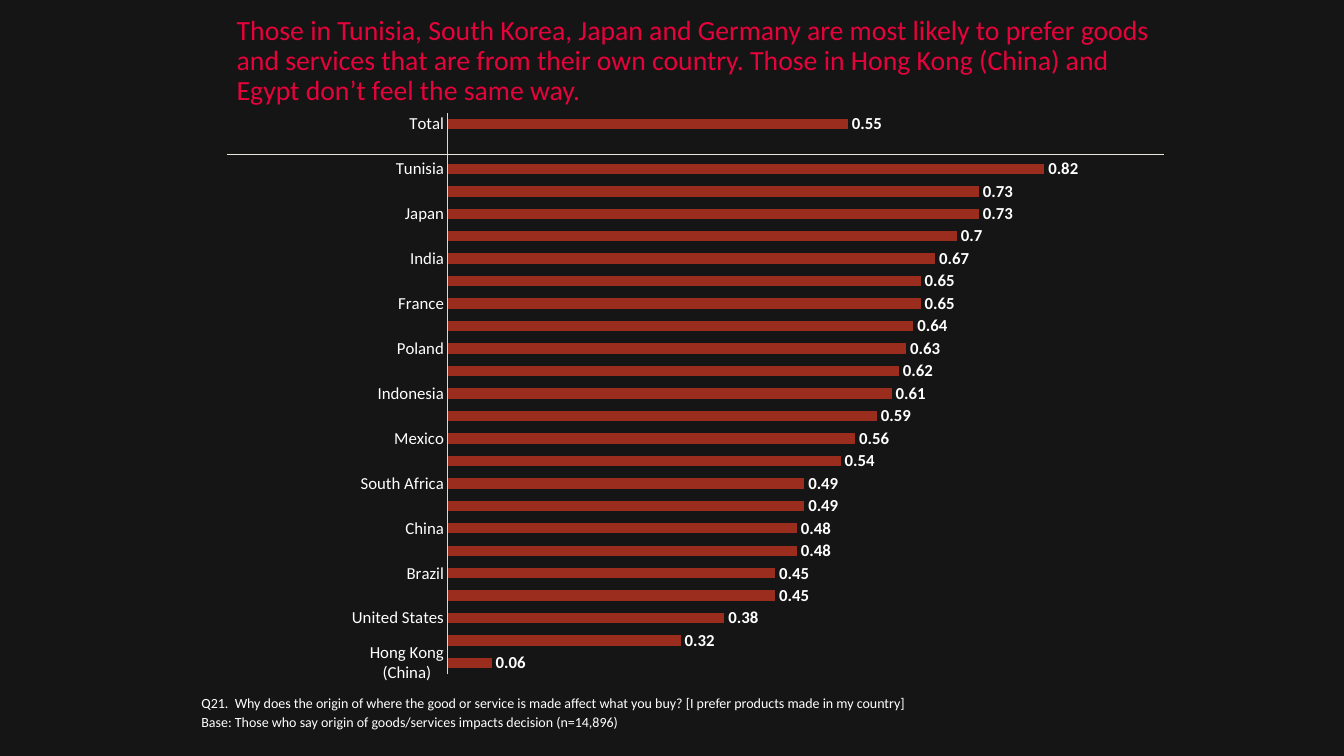
import pptx
import pptx.util
import pptx.chart.data
import pptx.dml.color
import pptx.enum.chart
import pptx.enum.shapes
import pptx.enum.text
import pptx.oxml
import pptx.oxml.ns
from dataclasses import dataclass

Pt = pptx.util.Pt

TITLE = (
    "Those in Tunisia, South Korea, Japan and Germany are most likely to prefer goods "
    "and services that are from their own country. Those in Hong Kong (China) and "
    "Egypt don’t feel the same way."
)
FOOTER = [
    "Q21.  Why does the origin of where the good or service is made affect what you buy? "
    "[I prefer products made in my country]",
    "Base: Those who say origin of goods/services impacts decision (n=14,896)",
]
SHARES = [
    ("Total", 0.55), ("", None), ("Tunisia", 0.82), ("South Korea", 0.73),
    ("Japan", 0.73), ("Germany", 0.7), ("India", 0.67), ("Canada", 0.65),
    ("France", 0.65), ("Australia", 0.64), ("Poland", 0.63), ("Italy", 0.62),
    ("Indonesia", 0.61), ("Great Britain", 0.59), ("Mexico", 0.56),
    ("Turkey", 0.54), ("South Africa", 0.49), ("Sweden", 0.49), ("China", 0.48),
    ("Pakistan", 0.48), ("Brazil", 0.45), ("Kenya", 0.45),
    ("United States", 0.38), ("Egypt", 0.32), ("Hong Kong (China)", 0.06),
]

SLIDE = (960, 540)
TITLE_BOX = (162, 11.5, 681, 65.5)
CHART_BOX = (246.2, 72, 604.8, 425.5)
PLOT_BOX = (320, 80.7, 519.3, 401.4)
FOOTER_BOX = (136.8, 493.2, 571.7, 32.4)
DIVIDER = (162, 831.6, 110.2)


@dataclass
class Theme:
    font: str = "Calibri"
    back: str = "151515"
    title: str = "E6023B"
    text: str = "FFFFFF"
    bar: str = "9B2D1F"
    axis: str = "D9D9D9"
    rule: str = "E9E5DC"
    title_size: float = 19.8
    chart_size: float = 12
    footer_size: float = 10


theme = Theme()


def rgb(value):
    return pptx.dml.color.RGBColor.from_string(value)


def set_font(font, size, color, bold=False):
    font.name, font.size, font.bold = theme.font, Pt(size), bold
    font.color.rgb = rgb(color)


def add_text(slide, box, lines, size, color, anchor, spacing, before=0):
    tf = slide.shapes.add_textbox(*map(Pt, box)).text_frame
    tf.word_wrap = True
    tf.vertical_anchor = anchor
    for i, line in enumerate(lines):
        p = tf.paragraphs[0] if i == 0 else tf.add_paragraph()
        p.text = line
        p.line_spacing = spacing
        p.space_before = Pt(before)
        set_font(p.font, size, color)


def place_plot(chart):
    left, top, width, height = CHART_BOX
    x, y, w, h = PLOT_BOX
    parts = {"x": (x - left) / width, "y": (y - top) / height,
             "w": w / width, "h": h / height}
    values = "".join(f'<c:{k} val="{v:.3f}"/>' for k, v in parts.items())
    layout = pptx.oxml.parse_xml(
        f'<c:layout {pptx.oxml.ns.nsdecls("c")}><c:manualLayout>'
        '<c:layoutTarget val="inner"/><c:xMode val="edge"/><c:yMode val="edge"/>'
        f'{values}</c:manualLayout></c:layout>'
    )
    area = chart.element.find(".//" + pptx.oxml.ns.qn("c:plotArea")) if hasattr(
        chart, "element") else chart._chartSpace.chart.plotArea
    old = area.find(pptx.oxml.ns.qn("c:layout"))
    if old is not None:
        area.remove(old)
    area.insert(0, layout)


def add_share_chart(slide):
    enums = pptx.enum.chart
    data = pptx.chart.data.CategoryChartData()
    data.categories = [country for country, share in SHARES]
    data.add_series("Series 1", [share for country, share in SHARES])
    chart = slide.shapes.add_chart(
        enums.XL_CHART_TYPE.BAR_CLUSTERED, *map(Pt, CHART_BOX), data
    ).chart
    chart.has_legend = chart.has_title = False
    set_font(chart.font, theme.chart_size, theme.text)

    cat = chart.category_axis
    cat.reverse_order = True
    cat.major_tick_mark = cat.minor_tick_mark = enums.XL_TICK_MARK.NONE
    cat.format.line.color.rgb = rgb(theme.axis)
    cat.format.line.width = Pt(0.75)
    set_font(cat.tick_labels.font, theme.chart_size, theme.text)

    val = chart.value_axis
    val.minimum_scale, val.maximum_scale = 0, 1
    val.has_major_gridlines = val.visible = False

    plot = chart.plots[0]
    plot.gap_width = 115
    plot.vary_by_categories = False
    fill = plot.series[0].format.fill
    fill.solid()
    fill.fore_color.rgb = rgb(theme.bar)
    plot.has_data_labels = True
    labels = plot.data_labels
    labels.show_value = True
    labels.position = enums.XL_LABEL_POSITION.OUTSIDE_END
    set_font(labels.font, theme.chart_size, theme.text, bold=True)
    place_plot(chart)


def add_divider(slide):
    x1, x2, y = map(Pt, DIVIDER)
    line = slide.shapes.add_connector(
        pptx.enum.shapes.MSO_CONNECTOR.STRAIGHT, x1, y, x2, y)
    line.line.color.rgb = rgb(theme.rule)
    line.line.width = Pt(1)
    properties = line.element.find(pptx.oxml.ns.qn("p:spPr"))
    properties.append(
        pptx.oxml.parse_xml(f'<a:effectLst {pptx.oxml.ns.nsdecls("a")}/>'))


def main():
    prs = pptx.Presentation()
    prs.slide_width, prs.slide_height = map(Pt, SLIDE)
    slide = prs.slides.add_slide(prs.slide_layouts[6])
    slide.background.fill.solid()
    slide.background.fill.fore_color.rgb = rgb(theme.back)
    anchors = pptx.enum.text.MSO_ANCHOR
    add_share_chart(slide)
    add_divider(slide)
    add_text(slide, FOOTER_BOX, FOOTER, theme.footer_size, theme.text,
             anchors.BOTTOM, 0.95, 2)
    add_text(slide, TITLE_BOX, [TITLE], theme.title_size, theme.title,
             anchors.MIDDLE, 0.9)
    prs.save("out.pptx")


if __name__ == "__main__":
    main()
